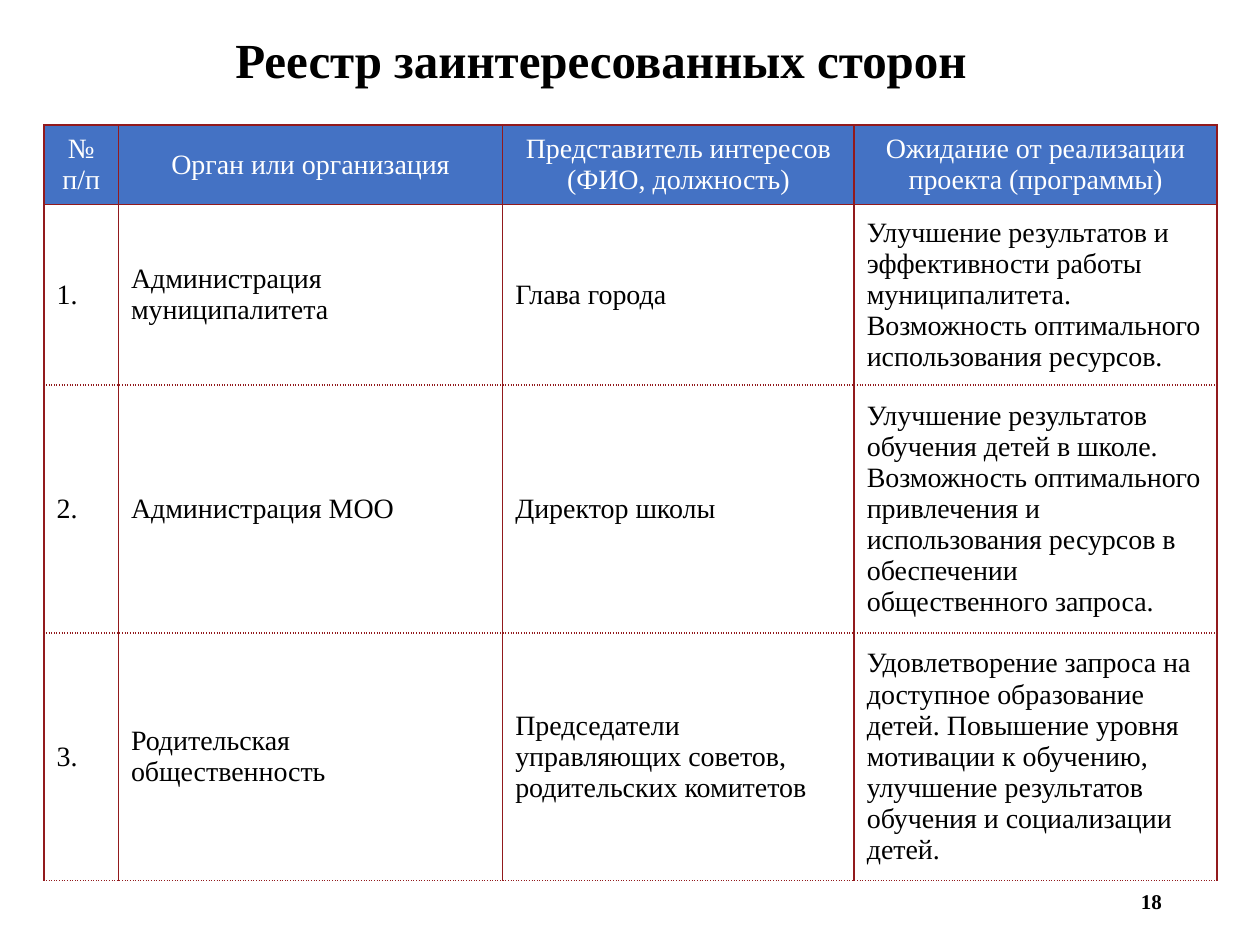
from lxml import etree
from pptx import Presentation
from pptx.dml.color import RGBColor
from pptx.enum.text import MSO_ANCHOR, PP_ALIGN
from pptx.oxml.ns import qn
from pptx.util import Inches, Pt

LEFT, CENTER, RIGHT = PP_ALIGN.LEFT, PP_ALIGN.CENTER, PP_ALIGN.RIGHT
MIDDLE, BOTTOM = MSO_ANCHOR.MIDDLE, MSO_ANCHOR.BOTTOM

BLACK = RGBColor(0x00, 0x00, 0x00)
WHITE = RGBColor(0xFF, 0xFF, 0xFF)
BLUE = RGBColor(0x44, 0x72, 0xC4)
DARK_RED = RGBColor(0x92, 0x1A, 0x1D)

COLUMNS = [0.59, 3.05, 2.79, 2.88]
ROW_HEIGHTS = [0.62, 1.39, 1.91, 1.91]
STAKEHOLDERS = [
    ["№\nп/п", "Орган или организация",
     "Представитель интересов\v(ФИО, должность)",
     "Ожидание от реализации проекта (программы)"],
    ["1.", "Администрация муниципалитета", "Глава города",
     "Улучшение результатов и эффективности работы муниципалитета. "
     "Возможность оптимального использования ресурсов."],
    ["2.", "Администрация МОО", "Директор школы",
     "Улучшение результатов обучения детей в школе. Возможность оптимального "
     "привлечения и использования ресурсов в обеспечении общественного запроса."],
    ["3.", "Родительская общественность",
     "Председатели управляющих советов, родительских комитетов",
     "Удовлетворение запроса на доступное образование детей. Повышение уровня "
     "мотивации к обучению, улучшение результатов обучения и социализации детей."],
]


class SlideBuilder:
    font = "Times New Roman"

    def __init__(self, prs):
        self.s = prs.slides.add_slide(prs.slide_layouts[5])

    def set_text(self, tf, text, size, color=BLACK, bold=False, align=LEFT, spacing=1.0):
        tf.text = text
        for p in tf.paragraphs:
            p.alignment = align
            p.line_spacing = spacing
            for r in p.runs:
                r.font.name = self.font
                r.font.size = Pt(size)
                r.font.bold = bold
                r.font.color.rgb = color

    def place(self, sp, box, anchor):
        sp.left, sp.top, sp.width, sp.height = map(Inches, box)
        sp.text_frame.word_wrap = True
        sp.text_frame.vertical_anchor = anchor

    def title(self, text, box):
        sp = self.s.shapes.title
        self.place(sp, box, BOTTOM)
        self.set_text(sp.text_frame, text, 28, bold=True, align=CENTER, spacing=0.9)

    def page_number(self, text, box):
        sp = self.s.shapes.add_textbox(0, 0, 0, 0)
        self.place(sp, box, MIDDLE)
        self.set_text(sp.text_frame, text, 12, bold=True, align=RIGHT)

    def border(self, cell, side, dash):
        tcPr = cell._tc.get_or_add_tcPr()
        ln = etree.SubElement(tcPr, qn(f"a:ln{side}"), w=str(Pt(1)))
        fill = etree.SubElement(ln, qn("a:solidFill"))
        etree.SubElement(fill, qn("a:srgbClr"), val=str(DARK_RED))
        etree.SubElement(ln, qn("a:prstDash"), val=dash)

    def table(self, rows, widths, heights, left, top):
        table = self.s.shapes.add_table(
            len(rows), len(widths), Inches(left), Inches(top),
            Inches(sum(widths)), Inches(sum(heights))).table
        table.horz_banding = False
        for column, width in zip(table.columns, widths):
            column.width = Inches(width)
        for i, (texts, height) in enumerate(zip(rows, heights)):
            table.rows[i].height = Inches(height)
            header = i == 0
            # Solid lines around the header, dotted lines between body rows
            dashes = {"L": "solid", "R": "solid",
                      "T": "solid" if i < 2 else "sysDot",
                      "B": "solid" if header else "sysDot"}
            for j, text in enumerate(texts):
                cell = table.cell(i, j)
                cell.vertical_anchor = MIDDLE
                for side, dash in dashes.items():
                    self.border(cell, side, dash)
                cell.fill.solid()
                cell.fill.fore_color.rgb = BLUE if header else WHITE
                self.set_text(cell.text_frame, text, 16,
                              color=WHITE if header else BLACK,
                              align=CENTER if header else LEFT)


def main():
    prs = Presentation()
    prs.slide_width, prs.slide_height = Inches(10), Inches(7.5)
    slide = SlideBuilder(prs)

    # Page number and title
    slide.page_number("18", (7.07, 6.95, 2.25, 0.4))
    slide.title("Реестр заинтересованных сторон", (1.06, 0.21, 7.42, 0.55))

    # Stakeholder register
    slide.table(STAKEHOLDERS, COLUMNS, ROW_HEIGHTS, 0.35, 0.99)

    prs.save("out.pptx")


if __name__ == "__main__":
    main()
